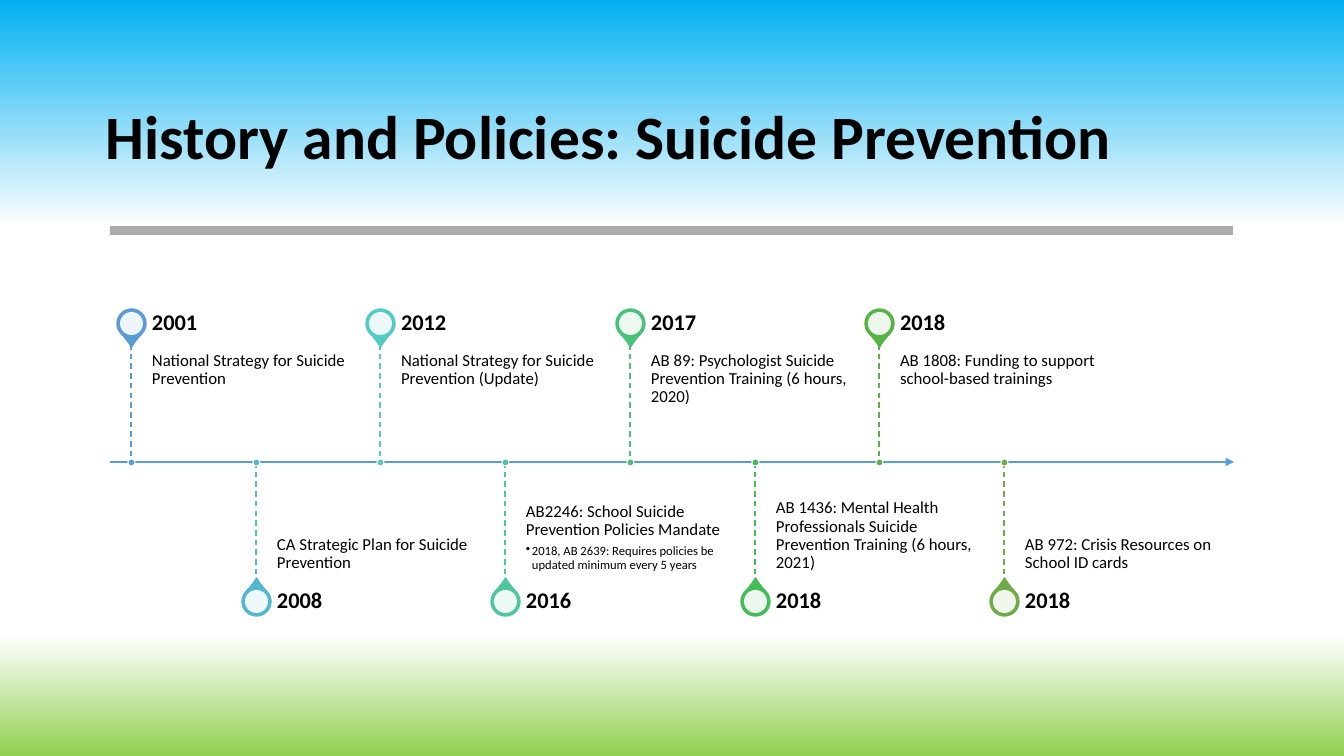
import dataclasses

import lxml.etree
import pptx
import pptx.dml.color
import pptx.enum.dml
import pptx.enum.shapes
import pptx.enum.text
import pptx.oxml.ns
import pptx.util

SHAPE = pptx.enum.shapes.MSO_SHAPE
ANCHOR = pptx.enum.text.MSO_ANCHOR


@dataclasses.dataclass(frozen=True)
class Theme:
    font: str = "Calibri"
    ink: str = "000000"
    paper: str = "FFFFFF"
    rule: str = "7F7F7F"
    axis: str = "599BD5"
    background: tuple = ((0, "00B0F0"), (30, "FFFFFF"), (84, "FFFFFF"), (100, "92D050"))
    title_size: int = 44
    year_size: int = 16
    policy_size: int = 12
    detail_size: int = 9


THEME = Theme()
SLIDE_WIDTH, SLIDE_HEIGHT = 1344, 756
AXIS_Y = 462
AXIS_LEFT, AXIS_RIGHT = 110, 1234
FIRST_X, LAST_X = 131, 1004
STEM, YEAR_HEIGHT = 118, 42
LABEL_OFFSET, LABEL_WIDTH = 21, 208
PIN, PIN_CENTER, DOT = 29, 23, 7

MILESTONES = [
    ("2001", "National Strategy for Suicide Prevention", None, "599BD5"),
    ("2008", "CA Strategic Plan for Suicide Prevention", None, "55B6D0"),
    ("2012", "National Strategy for Suicide Prevention (Update)", None, "51CBC3"),
    ("2016", "AB2246: School Suicide Prevention Policies Mandate",
     "2018, AB 2639: Requires policies be updated minimum every 5 years", "4DC69E"),
    ("2017", "AB 89: Psychologist Suicide Prevention Training (6 hours, 2020)", None, "4AC17A"),
    ("2018", "AB 1436: Mental Health Professionals Suicide Prevention Training (6 hours, 2021)",
     None, "46BC57"),
    ("2018", "AB 1808: Funding to support school-based trainings", None, "55B445"),
    ("2018", "AB 972: Crisis Resources on School ID cards", None, "6FAB46"),
]


def px(length):
    return pptx.util.Emu(round(length * 12192000 / SLIDE_WIDTH))


def rgb(color):
    return pptx.dml.color.RGBColor.from_string(color)


def add_child(parent, tag, **attributes):
    child = lxml.etree.SubElement(parent, pptx.oxml.ns.qn(tag))
    for name, value in attributes.items():
        child.set(name, str(value))
    return child


def paint_background(slide):
    fill = slide.background.fill
    fill.gradient()
    fill.gradient_angle = 270
    stops = slide.element.find(".//" + pptx.oxml.ns.qn("a:gsLst"))
    for stop in list(stops):
        stops.remove(stop)
    for position, color in THEME.background:
        stop = add_child(stops, "a:gs", pos=position * 1000)
        add_child(stop, "a:srgbClr", val=color)


def add_figure(slide, kind, box, color, opacity=100, outline=None, outline_width=1):
    figure = slide.shapes.add_shape(kind, *map(px, box))
    figure.shadow.inherit = False
    figure.fill.solid()
    figure.fill.fore_color.rgb = rgb(color)
    if opacity < 100:
        tint = figure.element.spPr.find(".//" + pptx.oxml.ns.qn("a:srgbClr"))
        add_child(tint, "a:alpha", val=opacity * 1000)
    if outline:
        figure.line.color.rgb = rgb(outline)
        figure.line.width = pptx.util.Pt(outline_width)
    else:
        figure.line.fill.background()
    return figure


def add_round(slide, kind, x, y, size, color, **style):
    box = (x - size // 2, y - size // 2, size, size)
    return add_figure(slide, kind, box, color, **style)


def add_line(slide, start, end, color, width):
    line = slide.shapes.add_connector(
        pptx.enum.shapes.MSO_CONNECTOR.STRAIGHT, *map(px, start + end))
    line.line.color.rgb = rgb(color)
    line.line.width = pptx.util.Pt(width)
    add_child(line.element.spPr, "a:effectLst")
    return line


def format_frame(frame, anchor, insets):
    frame.word_wrap = True
    frame.auto_size = pptx.enum.text.MSO_AUTO_SIZE.NONE
    frame.vertical_anchor = anchor
    (frame.margin_left, frame.margin_top,
     frame.margin_right, frame.margin_bottom) = map(px, insets)


def write(paragraph, words, size, bold=False):
    paragraph.alignment = pptx.enum.text.PP_ALIGN.LEFT
    paragraph.line_spacing = 0.9
    run = paragraph.add_run()
    run.text = words
    run.font.name = THEME.font
    run.font.size = pptx.util.Pt(size)
    run.font.bold = bold
    run.font.color.rgb = rgb(THEME.ink)


def add_label(slide, box, words, size, anchor, insets, bold=False):
    frame = slide.shapes.add_textbox(*map(px, box)).text_frame
    format_frame(frame, anchor, insets)
    write(frame.paragraphs[0], words, size, bold)
    return frame


def add_detail(frame, words):
    detail = frame.add_paragraph()
    detail.level = 1
    detail.space_before = pptx.util.Pt(4.2)
    write(detail, words, THEME.detail_size)
    properties = detail._p.get_or_add_pPr()
    properties.set("marL", str(px(6)))
    properties.set("indent", str(px(-6)))
    bullet_color = add_child(properties, "a:buClr")
    add_child(bullet_color, "a:srgbClr", val=THEME.ink)
    add_child(properties, "a:buChar", char="•")


def add_title(slide, words):
    title = slide.shapes.title
    title.left, title.top, title.width, title.height = map(px, (96, 67, 1152, 146))
    format_frame(title.text_frame, ANCHOR.MIDDLE, (10, 5, 10, 5))
    write(title.text_frame.paragraphs[0], words, THEME.title_size, bold=True)


def add_axis(slide):
    axis = add_line(slide, (AXIS_LEFT, AXIS_Y), (AXIS_RIGHT, AXIS_Y), THEME.axis, 1.5)
    add_child(axis.line._get_or_add_ln(), "a:tailEnd", type="triangle")


def add_milestone(slide, x, above, year, policy, detail, color):
    if above:
        policy_top, stem_end = AXIS_Y - STEM, AXIS_Y - STEM
        year_top = stem_end - YEAR_HEIGHT
        rotation, anchor, insets = 135, ANCHOR.TOP, (0, 8, 8, 12)
    else:
        policy_top, stem_end = AXIS_Y, AXIS_Y + STEM
        year_top = stem_end
        rotation, anchor, insets = 315, ANCHOR.BOTTOM, (0, 12, 0, 8)
    pin_y = year_top + YEAR_HEIGHT // 2
    label_left = x + LABEL_OFFSET

    pin = add_round(slide, SHAPE.TEAR, x, pin_y, PIN, color, outline=color)
    pin.adjustments[0] = 1.15
    pin.rotation = rotation
    add_round(slide, SHAPE.OVAL, x, pin_y, PIN_CENTER, THEME.paper, opacity=90)
    policy_frame = add_label(slide, (label_left, policy_top, LABEL_WIDTH, STEM),
                             policy, THEME.policy_size, anchor, insets)
    if detail:
        add_detail(policy_frame, detail)
    add_label(slide, (label_left, year_top, LABEL_WIDTH, YEAR_HEIGHT),
              year, THEME.year_size, ANCHOR.MIDDLE, (0, 0, 11, 0), bold=True)
    stem = add_line(slide, (x, min(AXIS_Y, stem_end)), (x, max(AXIS_Y, stem_end)), color, 1)
    stem.line.dash_style = pptx.enum.dml.MSO_LINE.DASH
    add_round(slide, SHAPE.OVAL, x, AXIS_Y, DOT, color,
              outline=THEME.paper, outline_width=0.75)


def main():
    deck = pptx.Presentation()
    deck.slide_width, deck.slide_height = px(SLIDE_WIDTH), px(SLIDE_HEIGHT)
    slide = deck.slides.add_slide(deck.slide_layouts[5])
    paint_background(slide)
    add_title(slide, "History and Policies: Suicide Prevention")
    add_figure(slide, SHAPE.RECTANGLE, (AXIS_LEFT, 226, 1123, 9), THEME.rule, opacity=65)
    add_axis(slide)
    step = (LAST_X - FIRST_X) / (len(MILESTONES) - 1)
    for index, milestone in enumerate(MILESTONES):
        add_milestone(slide, FIRST_X + round(index * step), index % 2 == 0, *milestone)
    deck.save("out.pptx")


if __name__ == "__main__":
    main()
